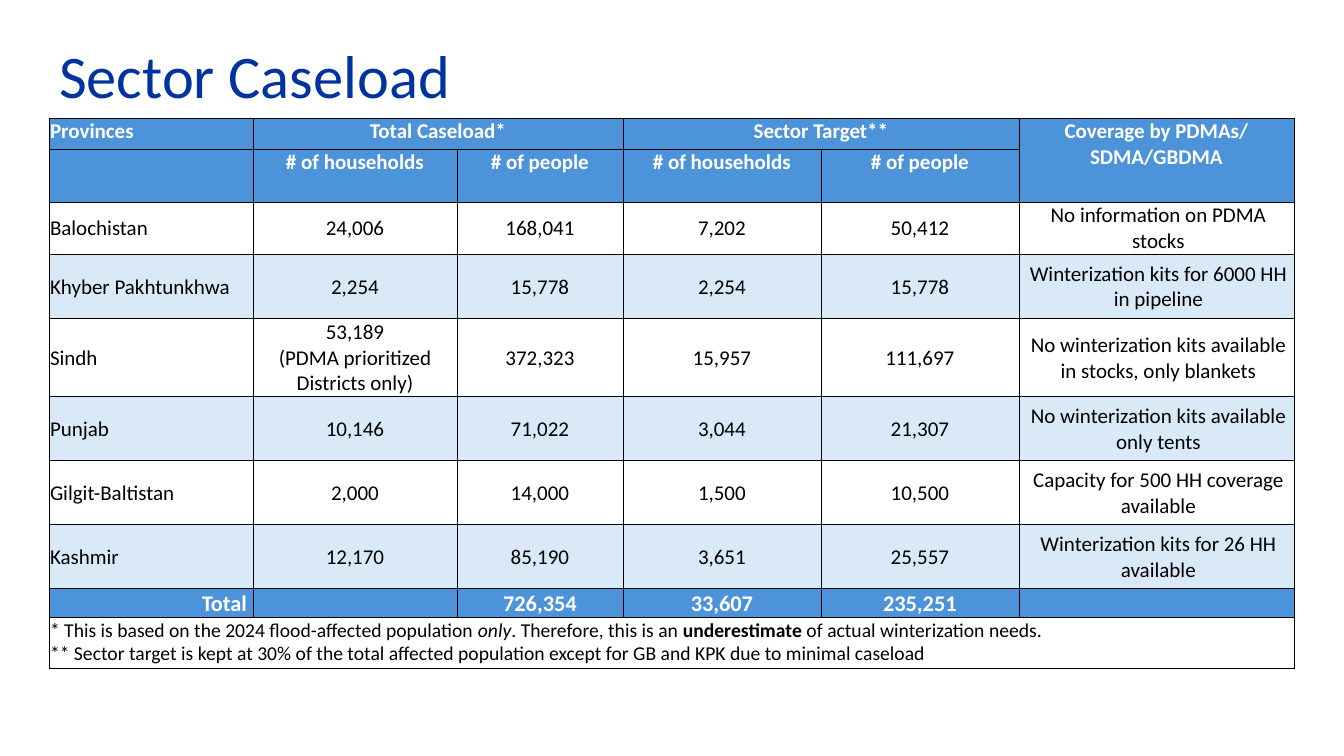
from dataclasses import dataclass

from lxml import etree
from pptx import Presentation
from pptx import util as u
from pptx.dml.color import RGBColor
from pptx.enum import text
from pptx.oxml import ns

SCALE = 914400 / 100.8


@dataclass(frozen=True)
class Theme:
    """Colours, font and type sizes of the slide."""
    font: str = "Calibri"
    navy: str = "0033A0"
    blue: str = "4D93D9"
    pale: str = "DAE9F8"
    white: str = "FFFFFF"
    black: str = "000000"
    title: float = 43.2
    body: int = 15
    total: int = 16
    note: int = 14
    rule: float = 0.5


THEME = Theme()
LEFT, CENTER, RIGHT = (text.PP_ALIGN.LEFT, text.PP_ALIGN.CENTER, text.PP_ALIGN.RIGHT)
TOP, MIDDLE, BOTTOM = (text.MSO_ANCHOR.TOP, text.MSO_ANCHOR.MIDDLE, text.MSO_ANCHOR.BOTTOM)

COLS = [204, 204, 166, 198, 198, 275]
ROWS = [31, 53, 52, 64, 78, 64, 64, 64, 29, 51]
HEADS = [
    ["Provinces", "Total Caseload*", "", "Sector Target**", "", "Coverage by PDMAs/ SDMA/GBDMA"],
    ["", "# of households", "# of people", "# of households", "# of people", ""],
]
AREAS = [
    ["Balochistan", "24,006", "168,041", "7,202", "50,412",
     "No information on PDMA stocks"],
    ["Khyber Pakhtunkhwa", "2,254", "15,778", "2,254", "15,778",
     "Winterization kits for 6000 HH in pipeline"],
    ["Sindh", "53,189\n(PDMA prioritized Districts only)", "372,323", "15,957", "111,697",
     "No winterization kits available in stocks, only blankets"],
    ["Punjab", "10,146", "71,022", "3,044", "21,307",
     "No winterization kits available only tents"],
    ["Gilgit-Baltistan", "2,000", "14,000", "1,500", "10,500",
     "Capacity for 500 HH coverage available"],
    ["Kashmir", "12,170", "85,190", "3,651", "25,557",
     "Winterization kits for 26 HH available"],
]
TOTAL = ["Total", "", "726,354", "33,607", "235,251", ""]
NOTES = [
    [("* This is based on the 2024 flood-affected population ", ""), ("only", "i"),
     (". Therefore, this is an ", ""), ("underestimate", "b"),
     (" of actual winterization needs.", "")],
    [("** Sector target is kept at 30% of the total affected population "
      "except for GB and KPK due to minimal caseload", "")],
]


def px(n):
    """Turn pixels into EMU."""
    return u.Emu(round(n * SCALE))


def style(run, size, color, bold=False, italic=False):
    """Format one run."""
    font = run.font
    font.name, font.size = THEME.font, u.Pt(size)
    font.bold, font.italic = bold, italic
    font.color.rgb = RGBColor.from_string(color)


def frame(cell, fill, anchor):
    """Give a cell its fill, margins and four borders."""
    cell.fill.solid()
    cell.fill.fore_color.rgb = RGBColor.from_string(fill)
    cell.vertical_anchor = anchor
    cell.margin_left = cell.margin_right = cell.margin_top = px(1)
    cell.margin_bottom = 0
    props = cell._tc.get_or_add_tcPr()
    for i, side in enumerate(("lnL", "lnR", "lnT", "lnB")):
        line = etree.Element(ns.qn("a:" + side), w=str(u.Pt(THEME.rule)))
        solid = etree.SubElement(line, ns.qn("a:solidFill"))
        etree.SubElement(solid, ns.qn("a:srgbClr"), val=THEME.black)
        props.insert(i, line)


def write(cell, words, size, color, bold, align):
    """Set the text of a cell and format it."""
    cell.text_frame.text = words
    for para in cell.text_frame.paragraphs:
        para.alignment = align
        for run in para.runs:
            style(run, size, color, bold)
        if not para.runs:
            etree.SubElement(para._p, ns.qn("a:endParaRPr"), sz=str(size * 100))


def add_row(table, row, words, fill, size, color, bold, anchor, first=LEFT):
    """Fill one row of six cells."""
    for col, word in enumerate(words):
        cell = table.cell(row, col)
        frame(cell, fill, anchor)
        write(cell, word, size, color, bold, CENTER if col else first)


def add_notes(table, row):
    """Fill the merged row of footnotes."""
    add_row(table, row, [""] * len(COLS), THEME.white, THEME.note, THEME.black, False, TOP)
    cell = table.cell(row, 0)
    cell.merge(table.cell(row, len(COLS) - 1))
    cell.text_frame.text = "\n".join("" for _ in NOTES)
    for para, parts in zip(cell.text_frame.paragraphs, NOTES):
        para.alignment = LEFT
        for words, mark in parts:
            run = para.add_run()
            run.text = words
            style(run, THEME.note, THEME.black, mark == "b", mark == "i")


def add_grid(slide, x, y):
    """Place the caseload table with its top left corner at x, y."""
    shape = slide.shapes.add_table(
        len(ROWS), len(COLS), px(x), px(y), px(sum(COLS)), px(sum(ROWS)))
    table = shape.table
    table.first_row = table.horz_banding = False
    for col, wide in zip(table.columns, COLS):
        col.width = px(wide)
    for row, high in zip(table.rows, ROWS):
        row.height = px(high)
    for i, words in enumerate(HEADS):
        add_row(table, i, words, THEME.blue, THEME.body, THEME.white, True, TOP)
    for i, words in enumerate(AREAS):
        row = i + len(HEADS)
        fill = THEME.pale if i % 2 else THEME.white
        add_row(table, row, words, fill, THEME.body, THEME.black, False, MIDDLE)
        table.cell(row, 5).margin_left = px(5)
    last = len(HEADS) + len(AREAS)
    add_row(table, last, TOTAL, THEME.blue, THEME.total, THEME.white, True, BOTTOM, RIGHT)
    table.cell(last, 0).margin_right = px(6)
    add_notes(table, last + 1)
    for col in (1, 3):
        table.cell(0, col).merge(table.cell(0, col + 1))
    table.cell(0, 5).merge(table.cell(1, 5))


def add_title(slide, x, y, w, h):
    """Place and format the slide title in the given box."""
    title = slide.shapes.title
    title.left, title.top, title.width, title.height = map(px, (x, y, w, h))
    body = title.text_frame
    body.text = "Sector Caseload"
    body.vertical_anchor = MIDDLE
    para = body.paragraphs[0]
    para.alignment, para.line_spacing = LEFT, 0.9
    style(para.runs[0], THEME.title, THEME.navy)


def main():
    """Build the slide and save it."""
    deck = Presentation()
    deck.slide_width, deck.slide_height = px(1344), px(756)
    slide = deck.slides.add_slide(deck.slide_layouts[5])
    add_title(slide, 49, 39, 1216, 80)
    add_grid(slide, 49, 118)
    deck.save("out.pptx")


if __name__ == "__main__":
    main()
